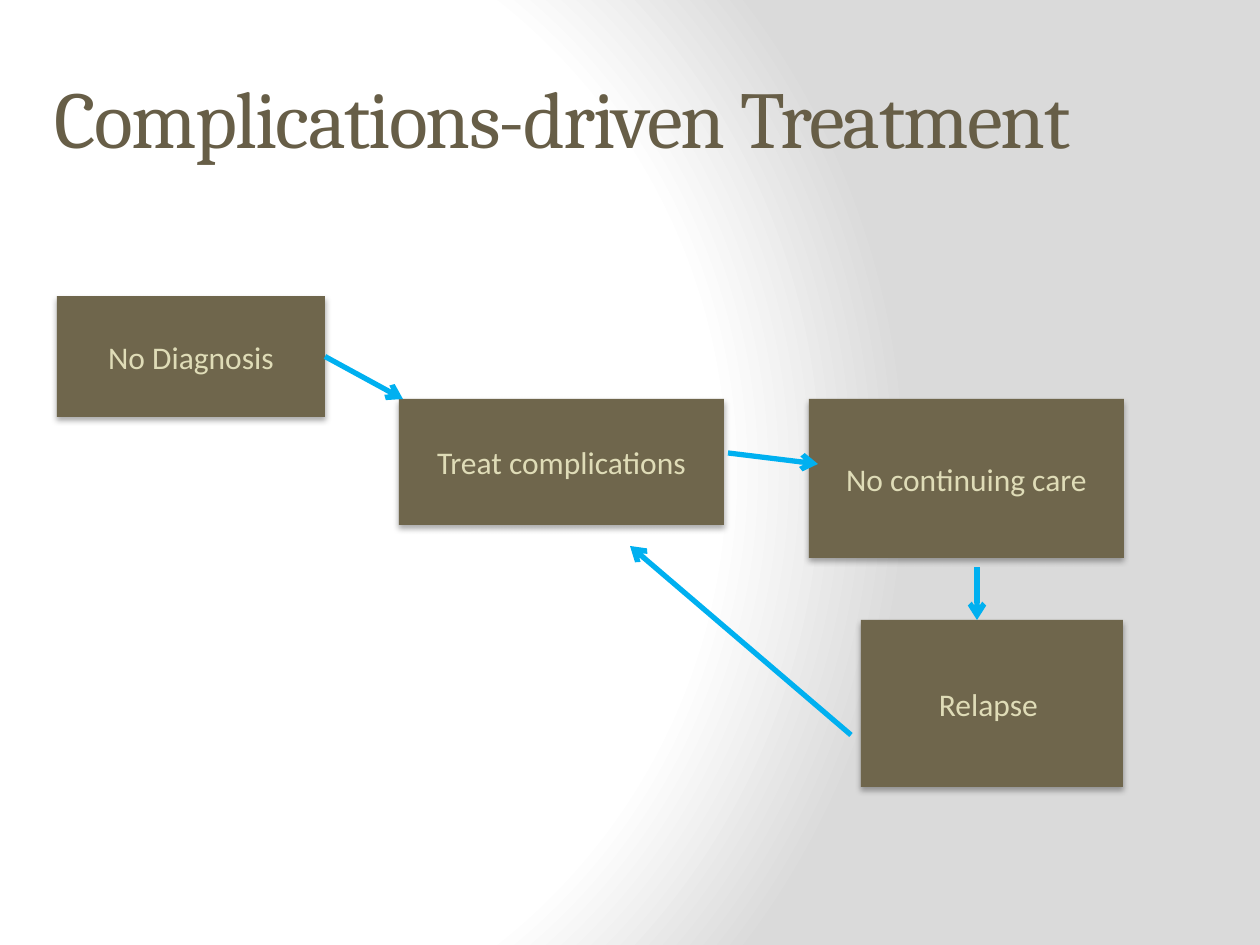
from lxml import etree
from pptx import Presentation
from pptx.dml.color import RGBColor
from pptx.enum.shapes import MSO_CONNECTOR, MSO_SHAPE
from pptx.enum.text import MSO_ANCHOR, MSO_AUTO_SIZE, PP_ALIGN
from pptx.oxml import parse_xml
from pptx.oxml.ns import nsdecls, qn
from pptx.util import Pt

EMU_PER_PX = 914400 / 126
RECTANGLE = MSO_SHAPE.RECTANGLE
STRAIGHT = MSO_CONNECTOR.STRAIGHT
MIDDLE = MSO_ANCHOR.MIDDLE
NO_AUTOFIT = MSO_AUTO_SIZE.NONE
LEFT, CENTER = PP_ALIGN.LEFT, PP_ALIGN.CENTER
TITLE_ONLY = 5
RIGHT_SIDE = 3

STEPS = {
    "No Diagnosis": (57, 296, 268, 121),
    "Treat complications": (399, 399, 325, 126),
    "No continuing care": (809, 399, 315, 159),
    "Relapse ": (861, 620, 262, 167),
}
ARROWS = [
    (325, 357, 403, 399),
    (977, 567, 977, 620),
    (851, 735, 630, 546),
    (728, 453, 818, 464),
]


def px(length):
    return round(length * EMU_PER_PX)


def color(hex_code):
    return RGBColor.from_string(hex_code)


def format_text(frame, size, font_name, hex_code, alignment):
    frame.word_wrap = True
    frame.vertical_anchor = MIDDLE
    paragraph = frame.paragraphs[0]
    paragraph.alignment = alignment
    run = paragraph.runs[0]
    run.font.size = Pt(size)
    run.font.name = font_name
    run.font.color.rgb = color(hex_code)
    return run


def set_background(slide):
    slide.background.fill.solid()
    solid = slide.element.find(".//" + qn("p:bgPr"))[0]
    stops = "".join(
        f'<a:gs pos="{percent * 1000}"><a:srgbClr val="{hex_code}"/></a:gs>'
        for percent, hex_code in [(0, "FFFFFF"), (75, "FFFFFF"), (100, "DADADA")]
    )
    gradient = parse_xml(
        f'<a:gradFill {nsdecls("a")} rotWithShape="1"><a:gsLst>{stops}</a:gsLst>'
        '<a:path path="circle"><a:fillToRect l="20000" t="50000" r="100000" b="50000"/>'
        "</a:path></a:gradFill>"
    )
    solid.getparent().replace(solid, gradient)


def set_title(slide, text):
    title = slide.shapes.title
    title.left, title.top, title.width, title.height = map(px, (42, 38, 1144, 157))
    title.text_frame.text = text
    title.text_frame.auto_size = NO_AUTOFIT
    run = format_text(title.text_frame, 46, "Cambria", "675E47", LEFT)
    run.font._element.set("spc", "-100")


def add_step(slide, label, bounds):
    step = slide.shapes.add_shape(RECTANGLE, *map(px, bounds))
    step.fill.solid()
    step.fill.fore_color.rgb = color("6F664C")
    step.line.fill.background()
    step.shadow.inherit = False
    step.element.spPr.find(qn("a:effectLst")).append(parse_xml(
        f'<a:outerShdw {nsdecls("a")} blurRad="44450" dist="27940" dir="5400000" '
        'rotWithShape="0"><a:srgbClr val="000000"><a:alpha val="32000"/></a:srgbClr>'
        "</a:outerShdw>"
    ))
    step.text_frame.text = label
    format_text(step.text_frame, 18, "Calibri", "DFDCB7", CENTER)
    return step


def add_arrow(slide, ends):
    arrow = slide.shapes.add_connector(STRAIGHT, *map(px, ends))
    arrow.line.color.rgb = color("00B0F0")
    arrow.line.width = Pt(3)
    properties = arrow.element.spPr
    etree.SubElement(properties.find(qn("a:ln")), qn("a:tailEnd"), type="arrow")
    etree.SubElement(properties, qn("a:effectLst"))
    return arrow


def main():
    presentation = Presentation()
    presentation.slide_width, presentation.slide_height = px(1260), px(945)
    slide = presentation.slides.add_slide(presentation.slide_layouts[TITLE_ONLY])
    set_background(slide)
    set_title(slide, "Complications-driven Treatment")
    steps = [add_step(slide, label, bounds) for label, bounds in STEPS.items()]
    arrows = [add_arrow(slide, ends) for ends in ARROWS]
    arrows[0].begin_connect(steps[0], RIGHT_SIDE)
    presentation.save("out.pptx")


if __name__ == "__main__":
    main()
